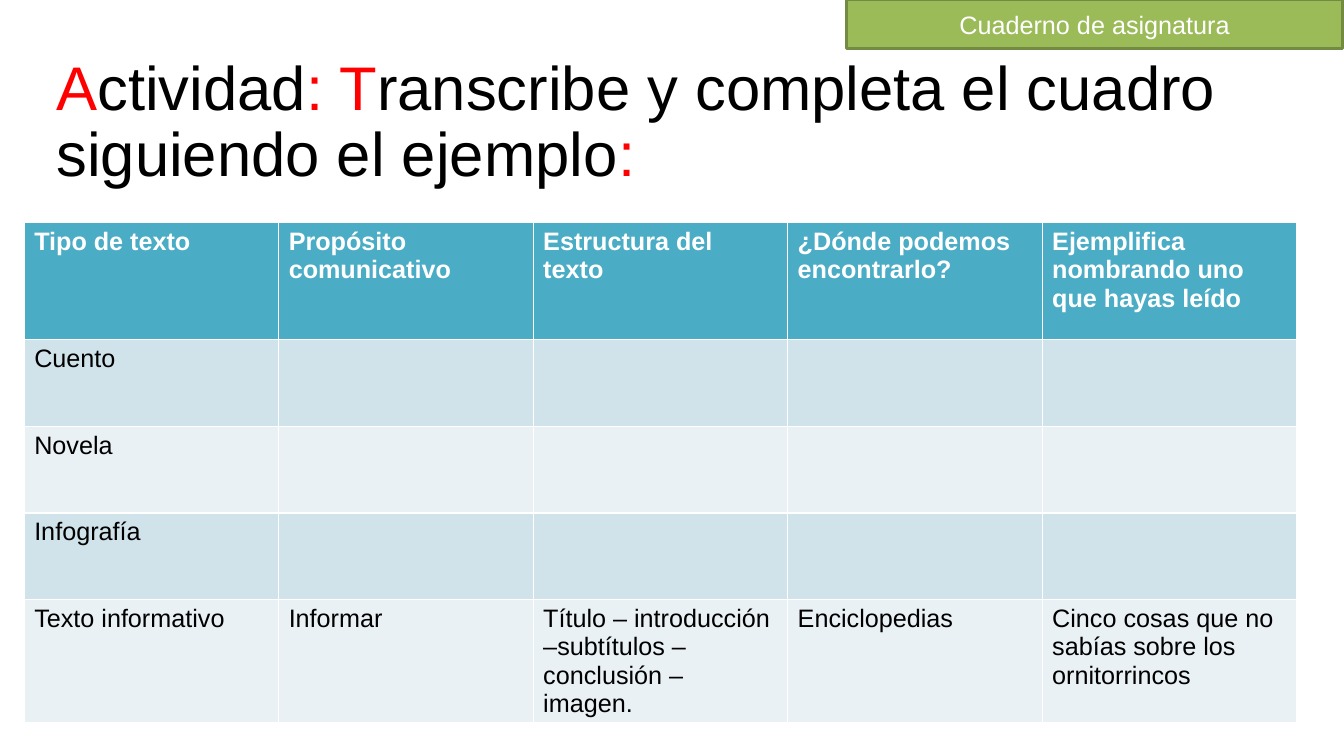
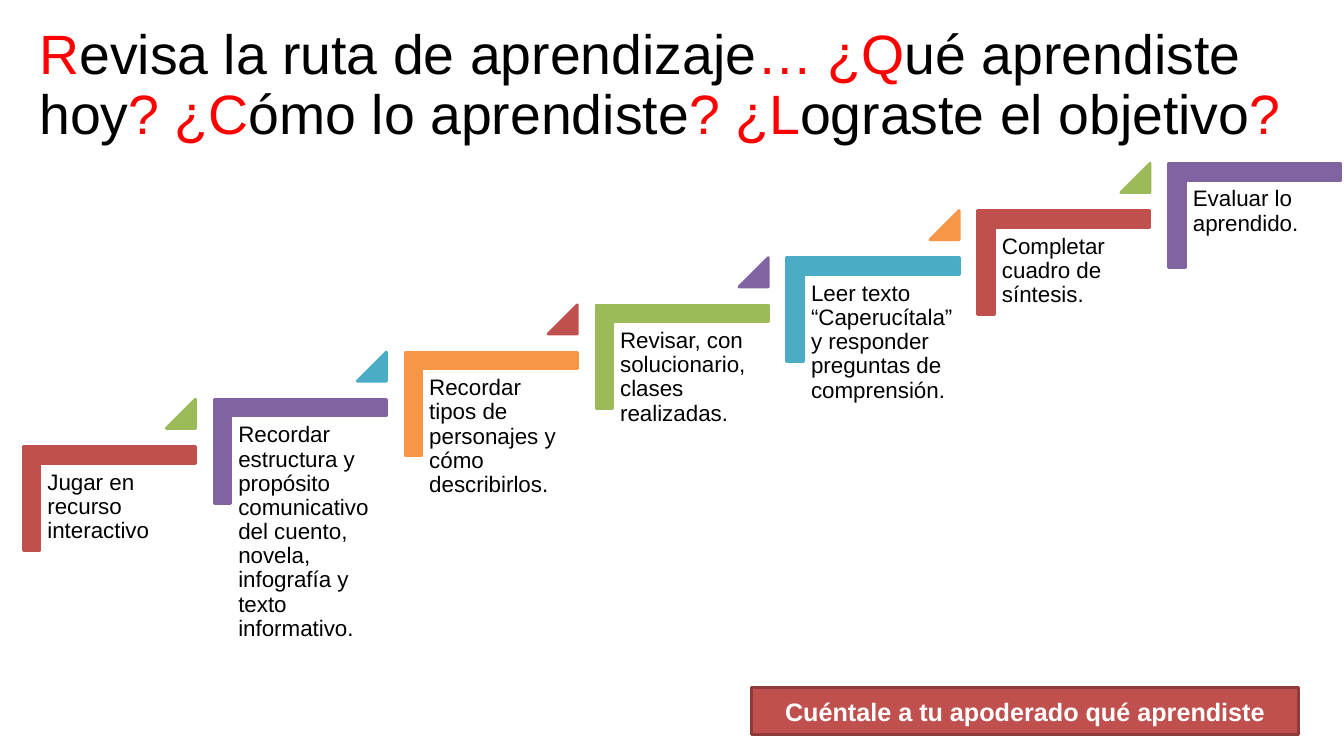
"""Builds two class slides: a table to complete and a learning route."""
import dataclasses

import pptx
import pptx.util
import pptx.dml.color
import pptx.enum.shapes
import pptx.enum.text

Inches = pptx.util.Inches
Pt = pptx.util.Pt
Kind = pptx.enum.shapes.MSO_SHAPE
Align = pptx.enum.text.PP_ALIGN
Anchor = pptx.enum.text.MSO_ANCHOR
rgb = pptx.dml.color.RGBColor.from_string


@dataclasses.dataclass(frozen=True)
class Theme:
    font: str = "Arial"
    black: str = "000000"
    white: str = "FFFFFF"
    mark: str = "FF0000"
    red: str = "C0504D"
    green: str = "9BBB59"
    purple: str = "8064A2"
    teal: str = "4BACC6"
    orange: str = "F79646"
    moss: str = "738A42"
    wine: str = "8E3B39"
    bands: tuple = ("E9F1F5", "D0E3EA")
    body: float = 18
    small: float = 16
    line: float = 2
    lead: float = 0.9


theme = Theme()


def style(para, size, color, bold=False):
    font = para.font
    font.name, font.size, font.bold = theme.font, Pt(size), bold
    font.color.rgb = rgb(color)


def block(shapes, kind, box, fill, edge):
    shape = shapes.add_shape(kind, *map(Inches, box))
    shape.shadow.inherit = False
    shape.fill.solid()
    shape.fill.fore_color.rgb = rgb(fill)
    shape.line.color.rgb = rgb(edge)
    shape.line.width = Pt(theme.line)
    return shape


deck = pptx.Presentation()
deck.slide_width, deck.slide_height = Inches(13.34), Inches(7.5)

heads = [
    ((0.46, 0.5, 12.42, 1.45), 44,
     ["A", "ctividad", ": T",
      "ranscribe y completa el cuadro siguiendo el ejemplo", ":"]),
    ((0.29, 0.13, 12.76, 1.45), 39.6,
     ["R", "evisa la ruta de aprendizaje", "… ¿Q", "ué aprendiste hoy",
      "? ¿C", "ómo lo aprendiste", "? ¿L", "ograste el objetivo", "?"]),
]
for box, size, parts in heads:
    title = deck.slides.add_slide(deck.slide_layouts[5]).shapes.title
    title.left, title.top, title.width, title.height = map(Inches, box)
    frame = title.text_frame
    frame.auto_size = pptx.enum.text.MSO_AUTO_SIZE.NONE
    frame.word_wrap = True
    frame.vertical_anchor = Anchor.MIDDLE
    para = frame.paragraphs[0]
    para.alignment, para.line_spacing = Align.LEFT, theme.lead
    style(para, size, theme.black)
    for i, part in enumerate(parts):
        run = para.add_run()
        run.text = part
        run.font.color.rgb = rgb(theme.black if i % 2 else theme.mark)

task, review = deck.slides

rows = [
    ["Tipo de texto", "Propósito comunicativo", "Estructura del texto",
     "¿Dónde podemos encontrarlo?",
     "Ejemplifica nombrando uno que hayas leído"],
    ["Cuento", "", "", "", ""],
    ["Novela", "", "", "", ""],
    ["Infografía", "", "", "", ""],
    ["Texto informativo", "Informar",
     "Título – introducción –subtítulos – conclusión – imagen.",
     "Enciclopedias", "Cinco cosas que no sabías sobre los ornitorrincos"],
]
highs = [1.16, 0.86, 0.86, 0.86, 1.22]
grid = task.shapes.add_table(
    len(rows), len(rows[0]), Inches(0.24), Inches(2.21),
    Inches(12.63), Inches(sum(highs))).table
for r, (row, high) in enumerate(zip(rows, highs)):
    grid.rows[r].height = Inches(high)
    for c, text in enumerate(row):
        cell = grid.cell(r, c)
        cell.text = text
        cell.fill.solid()
        cell.fill.fore_color.rgb = rgb(theme.bands[r % 2] if r else theme.teal)
        style(cell.text_frame.paragraphs[0], theme.body,
              theme.black if r else theme.white, r == 0)

tags = [
    (task, (8.4, 0, 4.93, 0.48), theme.green, theme.moss, False,
     "Cuaderno de asignatura"),
    (review, (7.46, 6.82, 5.43, 0.47), theme.red, theme.wine, True,
     "Cuéntale a tu apoderado qué aprendiste"),
]
for slide, box, fill, edge, bold, text in tags:
    frame = block(slide.shapes, Kind.RECTANGLE, box, fill, edge).text_frame
    frame.text = text
    frame.vertical_anchor = Anchor.MIDDLE
    frame.paragraphs[0].alignment = Align.CENTER
    style(frame.paragraphs[0], theme.body, theme.white, bold)

steps = [
    "Jugar en recurso interactivo",
    "Recordar estructura y propósito comunicativo del cuento, novela, "
    "infografía y texto informativo.",
    "Recordar tipos de personajes y cómo describirlos.",
    "Revisar, con solucionario, clases realizadas.",
    "Leer texto “Caperucítala” y responder preguntas de comprensión.",
    "Completar cuadro de síntesis.",
    "Evaluar lo aprendido.",
]
cycle = [theme.red, theme.green, theme.purple, theme.teal, theme.orange]
route = review.shapes.add_group_shape().shapes
for i, text in enumerate(steps):
    left, top = 0.57 + 1.895 * i, 4.09 - 0.468 * i
    color = cycle[2 * i % len(cycle)]
    stair = block(route, Kind.CORNER, (left, top, 1.03, 1.71), color, color)
    stair.rotation = 90
    stair.adjustments[0] = stair.adjustments[1] = 0.161

    label = route.add_textbox(Inches(left - 0.17), Inches(top + 0.51),
                              Inches(1.55), Inches(1.36))
    frame = label.text_frame
    frame.word_wrap = True
    frame.margin_left = frame.margin_right = Inches(0.07)
    frame.margin_top = frame.margin_bottom = Inches(0.07)
    frame.text = text
    frame.paragraphs[0].line_spacing = theme.lead
    style(frame.paragraphs[0], theme.small, theme.black)

    if i < len(steps) - 1:
        color = cycle[(2 * i + 1) % len(cycle)]
        wedge = block(route, Kind.ISOSCELES_TRIANGLE,
                      (left + 1.08, top - 0.13, 0.29, 0.29), color, color)
        wedge.adjustments[0] = 1

deck.save("out.pptx")
